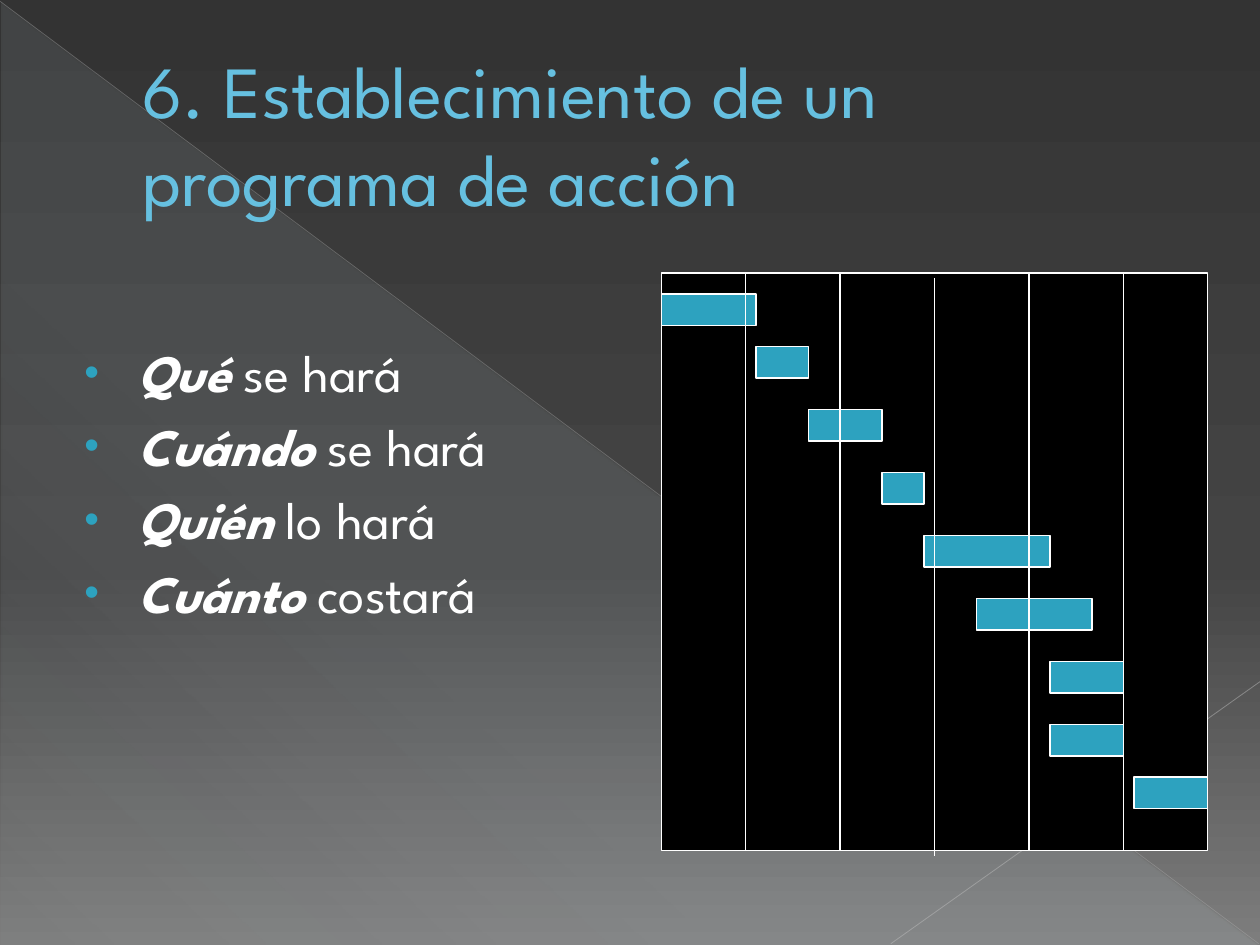
from pptx import Presentation
from pptx.dml.color import RGBColor
from pptx.enum.shapes import MSO_CONNECTOR, MSO_SHAPE
from pptx.enum.text import MSO_ANCHOR, MSO_AUTO_SIZE, PP_ALIGN
from pptx.oxml import parse_xml
from pptx.oxml.ns import nsdecls, qn
from pptx.util import Inches, Pt
from lxml.etree import SubElement

FONT = "League Spartan"
TITLE = "6. Establecimiento de un programa de acción"
ITEMS = [("Qué", " se hará"), ("Cuándo", " se hará"),
         ("Quién", " lo hará"), ("Cuánto", " costará")]
BACKDROP = [(0, "333333", 100), (60, "444444", 100), (100, "7D7D7D", 100)]
SHEEN = [(0, "DEF5FA", 10), (70, "DEF5FA", 8), (100, "DEF5FA", 1)]
DIAGONALS = [((0, 0.01, 9.99, 7.49), "B9B9B9", 0.39, 35),
             ((10, 5.41, 7.07, 7.49), "C1C1C1", 0.47, 45)]

UNIT = 1 / 12
LEFT, TOP, COLS, ROWS = 63, 26, 52, 55
BAR_ROWS = 3
TASKS = [(0, 2, 9), (9, 7, 5), (14, 13, 7), (21, 19, 4), (25, 25, 12),
         (30, 31, 11), (37, 37, 7), (37, 43, 7), (45, 48, 7)]
PERIODS = [(8, 0), (17, 0), (35, 0), (44, 0), (26, 0.5)]


def rgb(value):
    """Turn a hex string into a colour."""
    return RGBColor.from_string(value)


def set_gradient(props, stops, angle):
    """Replace the solid fill in props with a linear gradient."""
    gs = "".join(
        f'<a:gs pos="{pos * 1000}"><a:srgbClr val="{color}">'
        f'<a:alpha val="{alpha * 1000}"/></a:srgbClr></a:gs>'
        for pos, color, alpha in stops)
    grad = parse_xml(f'<a:gradFill {nsdecls("a")} rotWithShape="1"><a:gsLst>{gs}</a:gsLst>'
                     f'<a:lin ang="{angle * 60000}" scaled="0"/></a:gradFill>')
    props.replace(props.find(qn("a:solidFill")), grad)


def add_line(s, ends, color="FFFFFF", width=0.75, alpha=100):
    """Draw a straight line between two points in inches."""
    line = s.shapes.add_connector(MSO_CONNECTOR.STRAIGHT, *map(Inches, ends))
    line.line.color.rgb = rgb(color)
    line.line.width = Pt(width)
    sp_pr = line._element.spPr
    SubElement(sp_pr.find(".//" + qn("a:srgbClr")), qn("a:alpha"), val=str(alpha * 1000))
    SubElement(sp_pr, qn("a:effectLst"))
    return line


def add_box(s, col, row, cols, rows, color):
    """Draw a white-edged box placed on the chart's grid."""
    cells = (LEFT + col, TOP + row, cols, rows)
    box = s.shapes.add_shape(MSO_SHAPE.RECTANGLE, *(Inches(n * UNIT) for n in cells))
    box.shadow.inherit = False
    box.fill.solid()
    box.fill.fore_color.rgb = rgb(color)
    box.line.color.rgb = rgb("FFFFFF")
    box.line.width = Pt(0.75)


def place(sp, left, top, width, height):
    """Move a placeholder and return its text frame."""
    sp.left, sp.top, sp.width, sp.height = map(Inches, (left, top, width, height))
    tf = sp.text_frame
    tf.word_wrap = True
    tf.auto_size = MSO_AUTO_SIZE.NONE
    return tf


def style(p, size, color, margin, indent):
    """Set a paragraph's font, alignment and indents."""
    p.font.name, p.font.size = FONT, Pt(size)
    p.font.color.rgb = rgb(color)
    p.alignment = PP_ALIGN.LEFT
    p_pr = p._p.get_or_add_pPr()
    p_pr.set("marL", str(Inches(margin)))
    p_pr.set("indent", str(Inches(indent)))
    return p_pr


def add_backdrop(s):
    """Fill the background and put the decoration behind the text."""
    s.background.fill.solid()
    set_gradient(s.background._cSld.bg.bgPr, BACKDROP, 90)
    sheen = s.shapes.add_shape(MSO_SHAPE.RIGHT_TRIANGLE,
                               *map(Inches, (0.01, 0.02, 9.98, 7.48)))
    sheen.shadow.inherit = False
    sheen.line.fill.background()
    sheen.fill.solid()
    set_gradient(sheen._element.spPr, SHEEN, 133)
    decor = [sheen] + [add_line(s, *diagonal) for diagonal in DIAGONALS]
    for i, shape in enumerate(decor):
        s.shapes._spTree.insert(2 + i, shape._element)


def add_text(s):
    """Write the title and the bulleted list."""
    tf = place(s.shapes.title, 0.5, 0.29, 9, 1.53)
    tf.vertical_anchor = MSO_ANCHOR.MIDDLE
    tf.margin_right = Inches(0.2)
    tf.text = TITLE
    style(tf.paragraphs[0], 42, "66C0E0", 0.53, 0)

    tf = place(s.placeholders[1], 0.5, 2.65, 4.6, 4.4)
    for i, parts in enumerate(ITEMS):
        p = tf.paragraphs[0] if i == 0 else tf.add_paragraph()
        for text, strong in zip(parts, (True, False)):
            r = p.add_run()
            r.text = text
            r.font.bold = r.font.italic = strong
        p.space_before = Pt(6)
        p_pr = style(p, 30, "FFFFFF", 0.49, -0.42)
        bullet = parse_xml(f'<a:pPr {nsdecls("a")}><a:buClr><a:srgbClr val="2DA2BF"/></a:buClr>'
                           '<a:buSzPct val="80000"/><a:buFont typeface="Arial"/>'
                           '<a:buChar char="•"/></a:pPr>')
        at = list(p_pr).index(p_pr.find(qn("a:spcBef"))) + 1
        p_pr[at:at] = list(bullet)


def add_gantt(s):
    """Draw the schedule: frame, task bars and period lines."""
    add_box(s, 0, 0, COLS, ROWS, "000000")
    for col, row, cols in TASKS:
        add_box(s, col, row, cols, BAR_ROWS, "2DA2BF")
    for col, drop in PERIODS:
        x, y = (LEFT + col) * UNIT, (TOP + drop) * UNIT
        add_line(s, (x, y, x, y + ROWS * UNIT))


def main():
    """Build and save the slide."""
    prs = Presentation()
    prs.slide_width, prs.slide_height = Inches(10), Inches(7.5)
    s = prs.slides.add_slide(prs.slide_layouts[1])
    add_backdrop(s)
    add_text(s)
    add_gantt(s)
    prs.save("out.pptx")


if __name__ == "__main__":
    main()
